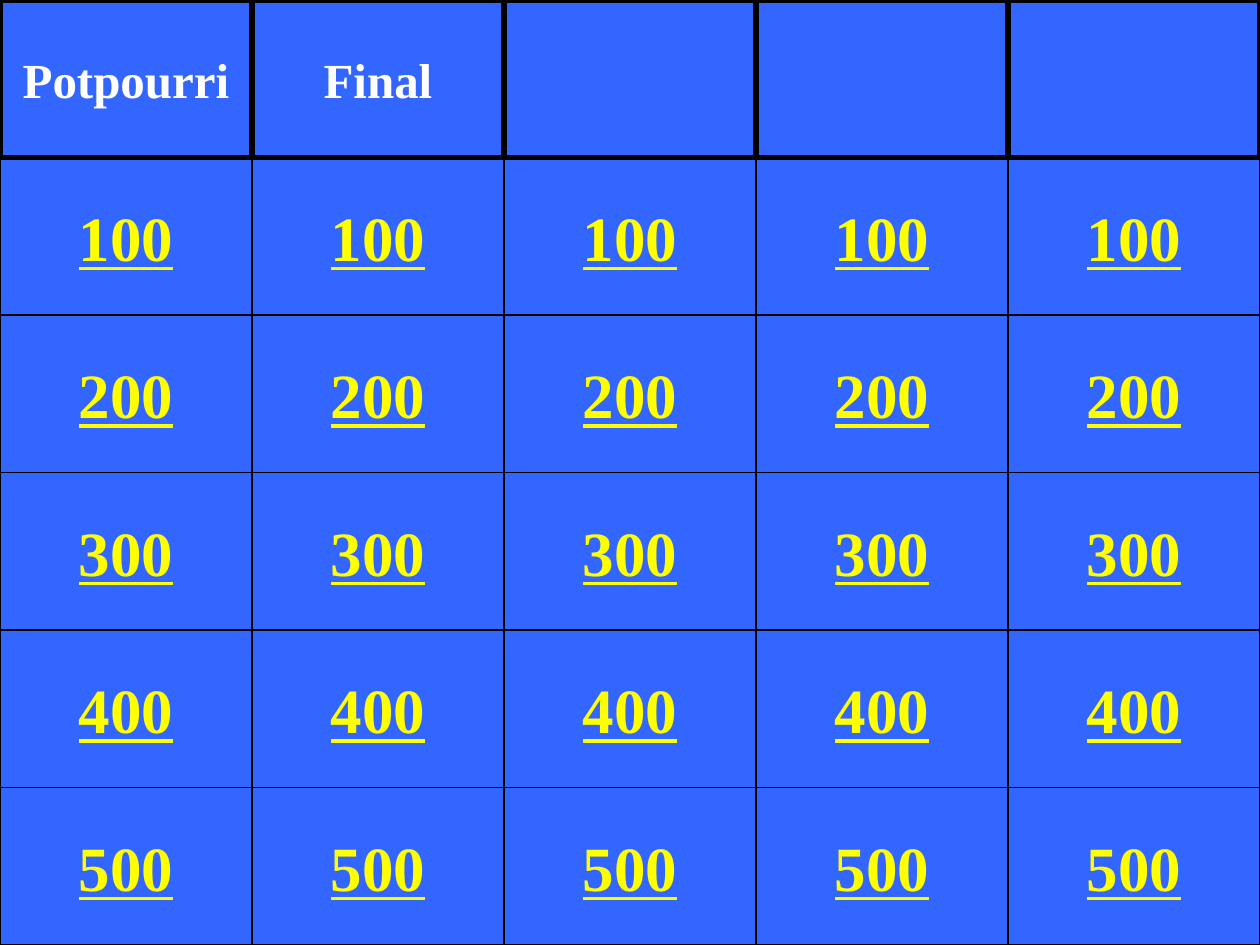
from pptx import Presentation
from pptx.dml.color import RGBColor
from pptx.enum.shapes import MSO_SHAPE as Shape
from pptx.enum.text import MSO_ANCHOR as Anchor, PP_ALIGN as Align
from pptx.util import Inches, Pt

BLUE, BLACK, WHITE, YELLOW = "3366FF", "000000", "FFFFFF", "FFFF00"
CATEGORIES = ["Potpourri", "Final", "", "", ""]
POINTS = [100, 200, 300, 400, 500]


def color(value):
    return RGBColor.from_string(value)


def add_cell(kind, column, row, text, size, text_color, line_width, underline=False):
    box = page.shapes.add_shape(
        kind, column * column_width, row * row_height, column_width, row_height)
    box.shadow.inherit = False
    box.fill.solid()
    box.fill.fore_color.rgb = color(BLUE)
    box.line.color.rgb = color(BLACK)
    box.line.width = Pt(line_width)
    if not text:
        return
    frame = box.text_frame
    frame.word_wrap = False
    frame.vertical_anchor = Anchor.MIDDLE
    para = frame.paragraphs[0]
    para.text = text
    para.alignment = Align.CENTER
    para.font.name = "Times New Roman"
    para.font.size = Pt(size)
    para.font.bold = True
    para.font.underline = underline
    para.font.color.rgb = color(text_color)


# Page and grid: one column per category, a header row above the points
deck = Presentation()
deck.slide_width, deck.slide_height = Inches(10), Inches(7.5)
page = deck.slides.add_slide(deck.slide_layouts[6])
page.background.fill.solid()
page.background.fill.fore_color.rgb = color(BLUE)
column_width = deck.slide_width // len(CATEGORIES)
row_height = deck.slide_height // (len(POINTS) + 1)

# Point buttons
for column in range(len(CATEGORIES)):
    for row, points in enumerate(POINTS, start=1):
        add_cell(Shape.ACTION_BUTTON_CUSTOM, column, row, str(points),
                 36, YELLOW, 0.75, underline=True)

# Category headers, in front of the buttons
for column, category in enumerate(CATEGORIES):
    add_cell(Shape.RECTANGLE, column, 0, category, 28, WHITE, 3)

deck.save("out.pptx")
